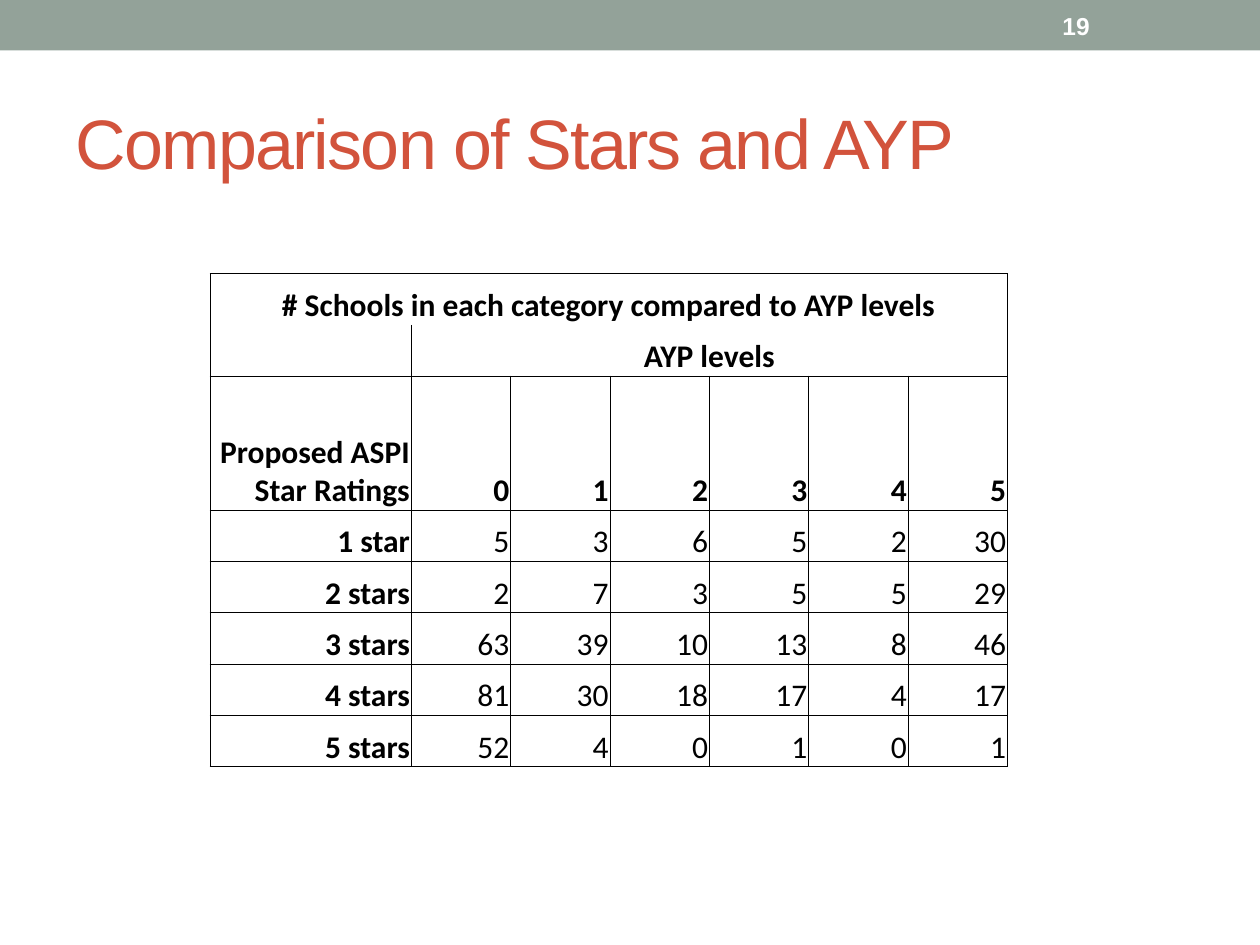
import pptx
import pptx.util
import pptx.dml.color
import pptx.enum.shapes
import pptx.enum.text
import pptx.oxml

Pt = pptx.util.Pt
Align = pptx.enum.text.PP_ALIGN
Anchor = pptx.enum.text.MSO_ANCHOR
HUES = {"bar": "93A299", "title": "D2533C", "page": "FFFFFF", "ink": "000000"}
NS = "http://schemas.openxmlformats.org/drawingml/2006/main"
HEADS = ["Proposed ASPI Star Ratings", 0, 1, 2, 3, 4, 5]
STARS = [
    ["1 star", 5, 3, 6, 5, 2, 30],
    ["2 stars", 2, 7, 3, 5, 5, 29],
    ["3 stars", 63, 39, 10, 13, 8, 46],
    ["4 stars", 81, 30, 18, 17, 4, 17],
    ["5 stars", 52, 4, 0, 1, 0, 1],
]


def tint(hue):
    return pptx.dml.color.RGBColor.from_string(HUES[hue])


def assign(item, values):
    for name, value in values.items():
        setattr(item, name, value)


def write(frame, text, hue, align, **font):
    para = frame.paragraphs[0]
    para.alignment = align
    run = para.add_run()
    run.text = str(text)
    assign(run.font, font)
    run.font.color.rgb = tint(hue)
    return run


def add_bar(slide, box):
    bar = slide.shapes.add_shape(pptx.enum.shapes.MSO_SHAPE.RECTANGLE, *map(Pt, box))
    bar.shadow.inherit = False
    bar.fill.solid()
    bar.fill.fore_color.rgb = tint("bar")
    bar.line.fill.background()


def add_page(slide, box):
    frame = slide.shapes.add_textbox(*map(Pt, box)).text_frame
    assign(frame, {"word_wrap": True, "vertical_anchor": Anchor.MIDDLE})
    write(frame, 19, "page", Align.LEFT, name="Arial", size=Pt(14), bold=True)


def set_title(slide, box):
    title = slide.shapes.title
    assign(title, dict(zip(("left", "top", "width", "height"), map(Pt, box))))
    frame = title.text_frame
    frame.vertical_anchor = Anchor.MIDDLE
    run = write(frame, "Comparison of Stars and AYP", "title", Align.LEFT,
                name="Arial", size=Pt(40))
    run.font._element.set("spc", "-100")


def edge(cell, sides):
    props = cell._tc.get_or_add_tcPr()
    for side in "LRTB":
        paint = "<a:noFill/>"
        if side in sides:
            paint = f'<a:solidFill><a:srgbClr val="{HUES["ink"]}"/></a:solidFill>'
        props.append(pptx.oxml.parse_xml(
            f'<a:ln{side} xmlns:a="{NS}" w="{Pt(0.5)}">{paint}</a:ln{side}>'))


def add_grid(slide, box):
    left, top, width, height = box
    first, tall = 115, 76.5
    rows = [["# Schools in each category compared to AYP levels"] + [None] * 6,
            [None, "AYP levels"] + [None] * 5, HEADS] + STARS
    grid = slide.shapes.add_table(len(rows), len(HEADS), *map(Pt, box)).table
    assign(grid, {"first_row": False, "horz_banding": False})
    for c, col in enumerate(grid.columns):
        col.width = Pt(first if c == 0 else (width - first) / (len(HEADS) - 1))
    for r, row in enumerate(grid.rows):
        row.height = Pt(tall if r == 2 else (height - tall) / (len(rows) - 1))
    grid.cell(0, 0).merge(grid.cell(0, 6))
    grid.cell(1, 1).merge(grid.cell(1, 6))
    look = {"margin_left": Pt(0.75), "margin_right": Pt(0.75), "margin_top": Pt(0.75),
            "margin_bottom": 0, "vertical_anchor": Anchor.BOTTOM}
    for r, row in enumerate(rows):
        for c, text in enumerate(row):
            cell = grid.cell(r, c)
            if cell.is_spanned:
                continue
            assign(cell, look)
            edge(cell, {0: "LRT", 1: "LRB"}.get(r, "LRTB"))
            cell.fill.background()
            if text is not None:
                write(cell.text_frame, text, "ink", Align.CENTER if r < 2 else Align.RIGHT,
                      name="Calibri", size=Pt(18), bold=r < 3 or c == 0)


def main():
    deck = pptx.Presentation()
    assign(deck, {"slide_width": Pt(720), "slide_height": Pt(540)})
    slide = deck.slides.add_slide(deck.slide_layouts[5])
    add_bar(slide, (0, 0, 720, 28.8))
    set_title(slide, (36, 42, 648, 78))
    add_page(slide, (600, 1.5, 84, 26))
    add_grid(slide, (120, 156.25, 455.8, 282))
    deck.save("out.pptx")


if __name__ == "__main__":
    main()
